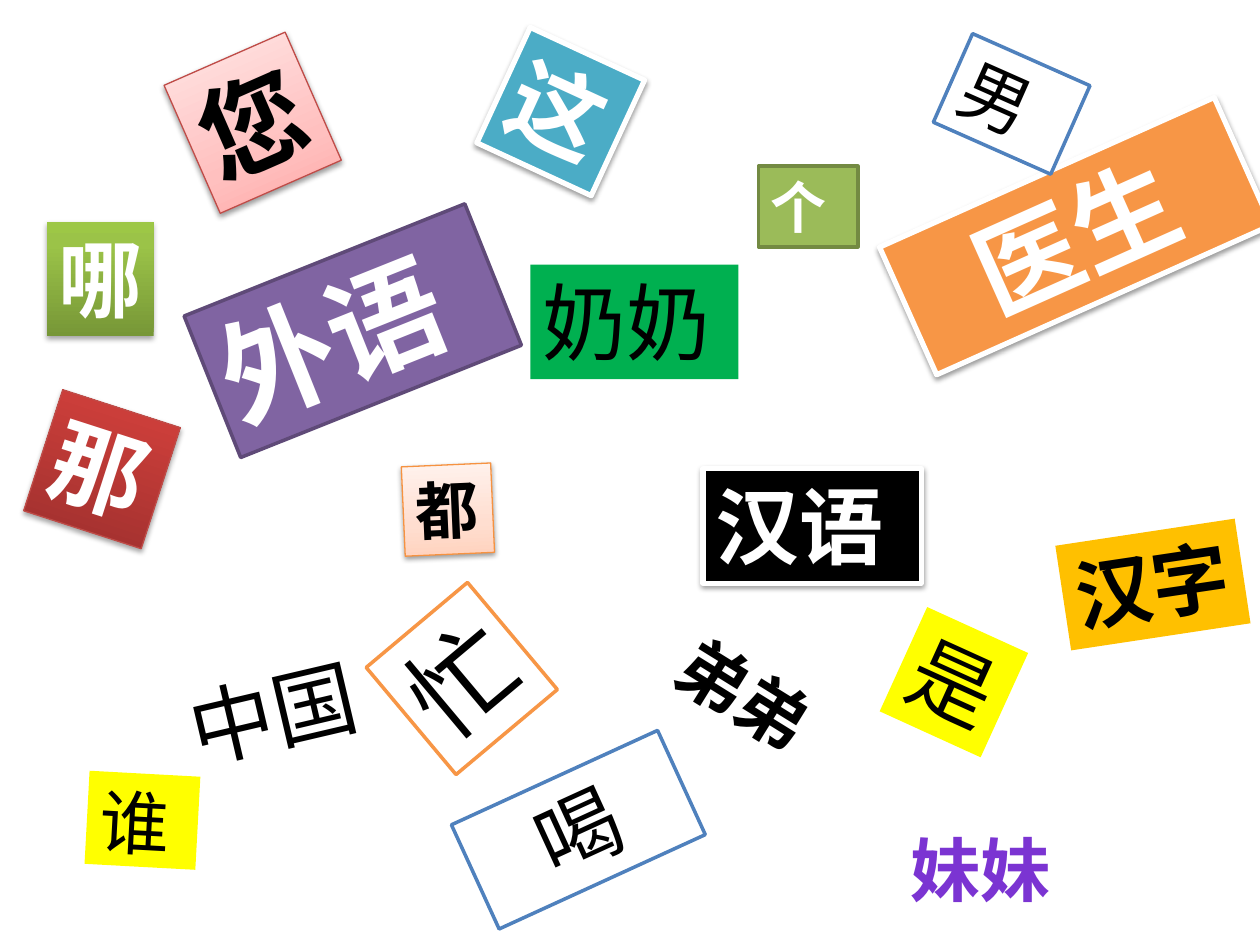
from dataclasses import dataclass
from typing import Optional, Union

from lxml.etree import SubElement
from pptx import Presentation
from pptx.dml.color import RGBColor
from pptx.enum.shapes import MSO_SHAPE
from pptx.enum.text import MSO_ANCHOR, MSO_AUTO_SIZE, PP_ALIGN
from pptx.oxml.ns import qn
from pptx.util import Pt

FONT = "Calibri"
BLACK = RGBColor(0x00, 0x00, 0x00)
WHITE = RGBColor(0xFF, 0xFF, 0xFF)
YELLOW = RGBColor(0xFF, 0xFF, 0x00)
AMBER = RGBColor(0xFF, 0xC0, 0x00)
GREEN = RGBColor(0x00, 0xB0, 0x50)
TEAL = RGBColor(0x4B, 0xAC, 0xC6)
ORANGE = RGBColor(0xF7, 0x96, 0x46)
BRIGHT_ORANGE = RGBColor(0xF6, 0x92, 0x40)
BLUE = RGBColor(0x4F, 0x81, 0xBD)
RED = RGBColor(0xBF, 0x4C, 0x48)
PURPLE = RGBColor(0x80, 0x64, 0xA2)
DARK_PURPLE = RGBColor(0x5F, 0x4A, 0x78)
OUTLINE_PURPLE = RGBColor(0x5E, 0x45, 0x7C)
OLIVE = RGBColor(0x9B, 0xBB, 0x59)
DARK_OLIVE = RGBColor(0x73, 0x8A, 0x42)


@dataclass(frozen=True)
class Gradient:
    """Stops are (percent, hex colour); angle is counter-clockwise degrees."""
    stops: tuple[tuple[int, str], ...]
    angle: int = 90


@dataclass(frozen=True)
class Shadow:
    opacity: int
    distance: float
    blur: float = 3.1


Paint = Union[RGBColor, Gradient]


@dataclass(frozen=True)
class Card:
    """A word card; position and size are in points, rotation in degrees."""
    text: str
    left: float
    top: float
    width: float
    height: float
    size: int
    rotation: float = 0
    fill: Optional[Paint] = None
    line: Optional[RGBColor] = None
    line_width: float = 2
    shadow: Optional[Shadow] = None
    color: Paint = BLACK
    bold: bool = False
    align: PP_ALIGN = PP_ALIGN.LEFT
    outline: Optional[RGBColor] = None


SOFT = Shadow(38, 1.6)
STRONG = Shadow(35, 1.8)
RED_FADE = Gradient(((0, "9C2F2D"), (80, "CB3E3A"), (100, "CE3B37")))
PEACH_FADE = Gradient(((0, "FFD2BD"), (35, "FFDED0"), (100, "FFF2ED")))
GREEN_FADE = Gradient(((0, "779737"), (80, "9BC348"), (100, "9DC746")))
PINK_FADE = Gradient(((0, "FFA6A5"), (35, "FFC0BF"), (100, "FFE7E7")))
VIOLET_FADE = Gradient(
    ((0, "3D1B67"), (43, "7B34D2"), (48, "7330C4"), (100, "3D1B67")), angle=270)

BODY_CARD = Card("谁", 49.7, 442.1, 63.4, 53.3, 40, 3.1, YELLOW)
CARDS = [
    Card("这", 284.4, 27.4, 72, 72.7, 54, 24.8, TEAL, WHITE, 3, SOFT, WHITE, True),
    Card("医生", 509.8, 95, 209.5, 79.9, 60, 335.9, ORANGE, WHITE, 3, SOFT,
         WHITE, True, PP_ALIGN.CENTER),
    Card("那", 23, 231.8, 70.6, 72.7, 54, 17.9, RED_FADE, RED, 0.75, STRONG,
         WHITE, True),
    Card("汉语", 401.8, 267.8, 124.6, 65.5, 48, 0, BLACK, WHITE, 3, SOFT, WHITE, True),
    Card("外语", 115.2, 145.4, 172.8, 87.1, 66, 338.2, PURPLE, DARK_PURPLE,
         color=WHITE, bold=True),
    Card("是", 513.4, 357.1, 63.4, 65.5, 48, 24.5, YELLOW),
    Card("都", 230.4, 265.7, 51.1, 51.1, 36, 357.5, PEACH_FADE, BRIGHT_ORANGE, 0.75,
         SOFT, bold=True),
    Card("哪", 26.6, 126.7, 61.2, 65.5, 48, fill=GREEN_FADE, shadow=STRONG,
         color=WHITE, bold=True),
    Card("您", 106.6, 30.2, 75.6, 79.9, 60, 336.3, PINK_FADE, RED, 0.75, SOFT,
         bold=True),
    Card("个", 433.4, 95, 56.9, 46.1, 32, 0, OLIVE, DARK_OLIVE, color=WHITE, bold=True),
    Card("汉字", 607, 303.8, 103.7, 60.5, 44, 351.4, AMBER, bold=True),
    Card("喝", 265.7, 441.4, 129.6, 65.5, 48, 335.4, WHITE, BLUE,
         align=PP_ALIGN.CENTER),
    Card("奶奶", 303.1, 151.2, 118.8, 65.5, 48, fill=GREEN),
    Card("中国", 100.8, 373, 121, 65.5, 48, 346.8),
    Card("弟弟", 377.3, 372.2, 108, 55.4, 40, 31.8, bold=True),
    Card("妹妹", 513.4, 468.7, 108, 55.4, 40, color=VIOLET_FADE, bold=True,
         outline=OUTLINE_PURPLE),
    Card("忙", 226.1, 347.8, 75.6, 79.9, 60, 320, WHITE, ORANGE),
    Card("男", 541.4, 31.7, 73.4, 55.4, 40, 23.9, WHITE, BLUE),
]


def apply_paint(fill, owner, paint: Paint) -> None:
    """Paint a fill; owner is the XML element that holds it."""
    if isinstance(paint, RGBColor):
        fill.solid()
        fill.fore_color.rgb = paint
        return
    fill.gradient()
    fill.gradient_angle = paint.angle
    stop_list = owner.find(qn("a:gradFill")).find(qn("a:gsLst"))
    for stop in list(stop_list):
        stop_list.remove(stop)
    for percent, color in paint.stops:
        stop = SubElement(stop_list, qn("a:gs"), pos=str(percent * 1000))
        SubElement(stop, qn("a:srgbClr"), val=color)


def add_shadow(shape, shadow: Shadow) -> None:
    effects = shape._element.spPr.find(qn("a:effectLst"))
    outer = SubElement(effects, qn("a:outerShdw"), blurRad=str(Pt(shadow.blur)),
                       dist=str(Pt(shadow.distance)), dir="5400000", rotWithShape="0")
    color = SubElement(outer, qn("a:srgbClr"), val=str(BLACK))
    SubElement(color, qn("a:alpha"), val=str(shadow.opacity * 1000))


def write_text(shape, text: str, *, size: int, color: Paint, bold: bool,
               align: PP_ALIGN, outline: Optional[RGBColor]) -> None:
    frame = shape.text_frame
    frame.word_wrap = True
    frame.vertical_anchor = MSO_ANCHOR.TOP
    paragraph = frame.paragraphs[0]
    paragraph.alignment = align
    run = paragraph.add_run()
    run.text = text
    font = run.font
    font.name, font.size, font.bold = FONT, Pt(size), bold
    properties = run._r.get_or_add_rPr()
    apply_paint(font.fill, properties, color)
    if outline is not None:
        line = SubElement(properties, qn("a:ln"), w=str(Pt(0.71)))
        SubElement(SubElement(line, qn("a:solidFill")), qn("a:srgbClr"),
                   val=str(outline))
        properties.insert(0, line)


def format_card(shape, card: Card) -> None:
    shape.rotation = card.rotation
    shape.shadow.inherit = False
    if card.fill is not None:
        apply_paint(shape.fill, shape._element.spPr, card.fill)
    if card.line is None:
        shape.line.fill.background()
    else:
        shape.line.color.rgb = card.line
        shape.line.width = Pt(card.line_width)
    if card.shadow is not None:
        add_shadow(shape, card.shadow)
    write_text(shape, card.text, size=card.size, color=card.color, bold=card.bold,
               align=card.align, outline=card.outline)


def bounds(card: Card) -> tuple[Pt, Pt, Pt, Pt]:
    return Pt(card.left), Pt(card.top), Pt(card.width), Pt(card.height)


def add_card(slide, card: Card) -> None:
    if card.fill is None:
        shape = slide.shapes.add_textbox(*bounds(card))
    else:
        shape = slide.shapes.add_shape(MSO_SHAPE.RECTANGLE, *bounds(card))
    format_card(shape, card)
    shape.text_frame.auto_size = MSO_AUTO_SIZE.SHAPE_TO_FIT_TEXT


def fill_body(slide, card: Card) -> None:
    """Turn the body placeholder into a card without a bullet."""
    body = slide.placeholders[1]
    body.left, body.top, body.width, body.height = bounds(card)
    format_card(body, card)
    properties = body.text_frame.paragraphs[0]._p.get_or_add_pPr()
    properties.set("marL", "0")
    properties.set("indent", "0")
    SubElement(properties, qn("a:buNone"))


def main() -> None:
    presentation = Presentation()
    presentation.slide_width, presentation.slide_height = Pt(720), Pt(540)
    slide = presentation.slides.add_slide(presentation.slide_layouts[1])
    title = slide.shapes.title._element
    title.getparent().remove(title)
    fill_body(slide, BODY_CARD)
    for card in CARDS:
        add_card(slide, card)
    presentation.save("out.pptx")


if __name__ == "__main__":
    main()
